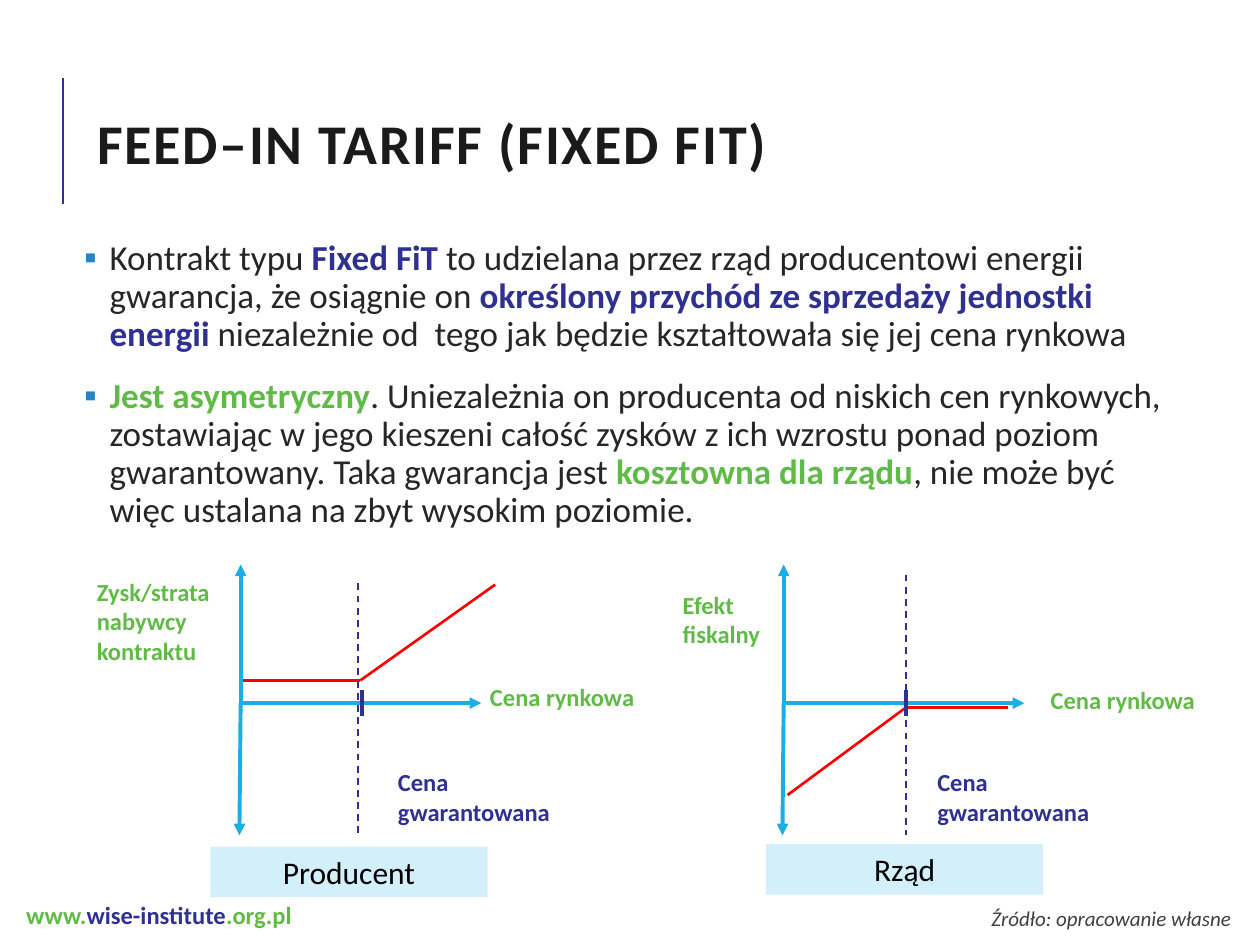
import pptx
import pptx.util
import pptx.dml.color
import pptx.enum.dml
import pptx.enum.shapes
import pptx.enum.text
import pptx.oxml
import pptx.oxml.ns
from pptx.util import Inches, Pt

ALIGN = pptx.enum.text.PP_ALIGN
FIT = pptx.enum.text.MSO_AUTO_SIZE
ANCHOR = pptx.enum.text.MSO_ANCHOR

FONT = "Calibri"
NAVY, GREEN, CYAN, RED = "2E3092", "60BB46", "1CADE4", "FF0000"
DARK, BULLET, PALE = "262626", "2683C6", "D2EFFA"

# Content: runs are (text, colour, bold)
TITLE = "FEED–IN TARIFF (FIXED FIT)"
POINTS = [
    [("Kontrakt typu ", DARK, False),
     ("Fixed FiT ", NAVY, True),
     ("to udzielana przez rząd producentowi energii gwarancja, "
      "że osiągnie on ", DARK, False),
     ("określony przychód ze sprzedaży jednostki energii", NAVY, True),
     (" niezależnie od  tego jak będzie kształtowała się jej cena rynkowa",
      DARK, False)],
    [("Jest asymetryczny", GREEN, True),
     (". Uniezależnia on producenta od niskich cen rynkowych, zostawiając "
      "w jego kieszeni całość zysków z ich wzrostu ponad poziom "
      "gwarantowany. Taka gwarancja jest ", DARK, False),
     ("kosztowna dla rządu", GREEN, True),
     (", nie może być więc ustalana na zbyt wysokim poziomie.", DARK, False)],
]
WEBSITE = [("www.", GREEN, True), ("wise-institute", NAVY, True),
           (".org.pl", GREEN, True)]
SOURCE = "Źródło: opracowanie własne"

# Payoff diagrams: points and boxes are offsets from the origin of the axes
AXIS_Y, AXIS_LENGTH, AXIS_UP, AXIS_DOWN = 5.58, 1.91, 1.10, 1.05
DIAGRAMS = [
    {"origin": 1.91, "guaranteed": 0.93, "tick": 0.965, "guide_top": -0.95,
     "payoff": [(-0.01, -0.18), (0.95, -0.18), (2.02, -0.94)],
     "labels": [(["Zysk/strata nabywcy", "kontraktu"], GREEN,
                 (-1.24, -1.05, 1.65, 0.81)),
                (["Cena rynkowa"], GREEN, (1.88, -0.22, 1.65, 0.38)),
                (["Cena gwarantowana"], NAVY, (1.15, 0.46, 1.49, 0.57))],
     "name": "Producent", "name_box": (-0.24, 1.14, 2.2, 0.4)},
    {"origin": 6.22, "guaranteed": 0.97, "tick": 0.97, "guide_top": -1.02,
     "payoff": [(0.03, 0.73), (0.97, 0.035), (1.78, 0.035)],
     "labels": [(["Efekt", "fiskalny"], GREEN, (-0.9, -0.95, 1.33, 0.57)),
                (["Cena rynkowa"], GREEN, (2.02, -0.19, 1.65, 0.38)),
                (["Cena gwarantowana"], NAVY, (1.12, 0.46, 1.49, 0.57))],
     "name": "Rząd", "name_box": (-0.14, 1.12, 2.2, 0.4)},
]


def rgb(value):
    return pptx.dml.color.RGBColor.from_string(value)


def add_xml(parent, tag, **attributes):
    child = parent.makeelement(pptx.oxml.ns.qn(tag), attributes)
    parent.append(child)
    return child


def style(run, size, colour, bold=False, italic=False):
    run.font.name, run.font.size = FONT, Pt(size)
    run.font.bold, run.font.italic = bold, italic
    run.font.color.rgb = rgb(colour)


def add_runs(paragraph, runs, size):
    for text, colour, bold in runs:
        run = paragraph.add_run()
        run.text = text
        style(run, size, colour, bold)


def add_box(slide, place, wrap=True):
    frame = slide.shapes.add_textbox(*map(Inches, place)).text_frame
    frame.word_wrap = wrap
    frame.auto_size = FIT.SHAPE_TO_FIT_TEXT if wrap else FIT.NONE
    return frame


def add_line(slide, start, end, colour, width, arrow=False, dashed=False):
    line = slide.shapes.add_connector(
        pptx.enum.shapes.MSO_CONNECTOR.STRAIGHT,
        *map(Inches, (*start, *end)))
    line.line.color.rgb, line.line.width = rgb(colour), Pt(width)
    if dashed:
        line.line.dash_style = pptx.enum.dml.MSO_LINE.DASH
    if arrow:
        add_xml(line.line._get_or_add_ln(), "a:tailEnd", type="triangle")
    add_xml(line._element.spPr, "a:effectLst")


def add_diagram(slide, diagram):
    def at(x, y):
        return diagram["origin"] + x, AXIS_Y + y

    # Payoff line
    payoff = diagram["payoff"]
    for start, end in zip(payoff, payoff[1:]):
        add_line(slide, at(*start), at(*end), RED, 1.5)
    # Axes
    for end in [(AXIS_LENGTH, 0), (0, -AXIS_UP), (-0.01, AXIS_DOWN)]:
        add_line(slide, at(0, 0), at(*end), CYAN, 2.25, arrow=True)
    # Guaranteed price
    tick, guide = diagram["tick"], diagram["guaranteed"]
    add_line(slide, at(tick, -0.1), at(tick, 0.1), NAVY, 2.25)
    add_line(slide, at(guide, diagram["guide_top"]), at(guide, AXIS_DOWN),
             NAVY, 1, dashed=True)
    # Labels
    for lines, colour, (x, y, width, height) in diagram["labels"]:
        frame = add_box(slide, (*at(x, y), width, height))
        frame.text = "\n".join(lines)
        for paragraph in frame.paragraphs:
            style(paragraph.runs[0], 14, colour, bold=True)
    # Name of the party
    x, y, width, height = diagram["name_box"]
    party = slide.shapes.add_shape(
        pptx.enum.shapes.MSO_SHAPE.RECTANGLE,
        *map(Inches, (*at(x, y), width, height)))
    party.shadow.inherit = False
    party.fill.solid()
    party.fill.fore_color.rgb = rgb(PALE)
    party.line.fill.background()
    party.text_frame.text = diagram["name"]
    party.text_frame.paragraphs[0].alignment = ALIGN.CENTER
    style(party.text_frame.paragraphs[0].runs[0], 18, "000000")


def main():
    deck = pptx.Presentation()
    deck.slide_width, deck.slide_height = Inches(10), Inches(7.5)
    slide = deck.slides.add_slide(deck.slide_layouts[5])

    # Title with its side rule
    add_line(slide, (0.5, 1.62), (0.5, 0.62), NAVY, 1.5)
    title = slide.shapes.title
    title.left, title.top, title.width, title.height = map(
        Inches, (0.67, 0.62, 7.3, 1.11))
    frame = title.text_frame
    frame.text = TITLE
    frame.auto_size, frame.vertical_anchor = FIT.NONE, ANCHOR.MIDDLE
    heading = frame.paragraphs[0]
    heading.alignment, heading.line_spacing = ALIGN.LEFT, 0.8
    style(heading.runs[0], 32, "1A1A1A", bold=True)
    heading.runs[0].font._element.set("spc", "100")

    # Bulleted text
    body = add_box(slide, (0.52, 1.86, 8.75, 4.5))
    body.auto_size = FIT.NONE
    body.margin_left = body.margin_right = Inches(0.05)
    body.margin_top = body.margin_bottom = Inches(0.05)
    for index, runs in enumerate(POINTS):
        point = body.add_paragraph() if index else body.paragraphs[0]
        point.line_spacing = 0.9
        point.space_before, point.space_after = Pt(12 if index else 0), Pt(2)
        properties = point._p.get_or_add_pPr()
        properties.set("marL", str(Inches(0.3)))
        properties.set("indent", str(Inches(-0.2)))
        add_xml(add_xml(properties, "a:buClr"), "a:srgbClr", val=BULLET)
        add_xml(properties, "a:buFont", typeface=FONT)
        add_xml(properties, "a:buChar", char="▪")
        add_runs(point, runs, 20)

    for diagram in DIAGRAMS:
        add_diagram(slide, diagram)

    # Website and source
    website = add_box(slide, (0.11, 7.09, 2.32, 0.34), wrap=False)
    add_runs(website.paragraphs[0], WEBSITE, 14)
    source = add_box(slide, (5.62, 7.14, 4.25, 0.3))
    source.text = SOURCE
    source.paragraphs[0].alignment = ALIGN.RIGHT
    style(source.paragraphs[0].runs[0], 12, "404040", italic=True)

    deck.save("out.pptx")


if __name__ == "__main__":
    main()
